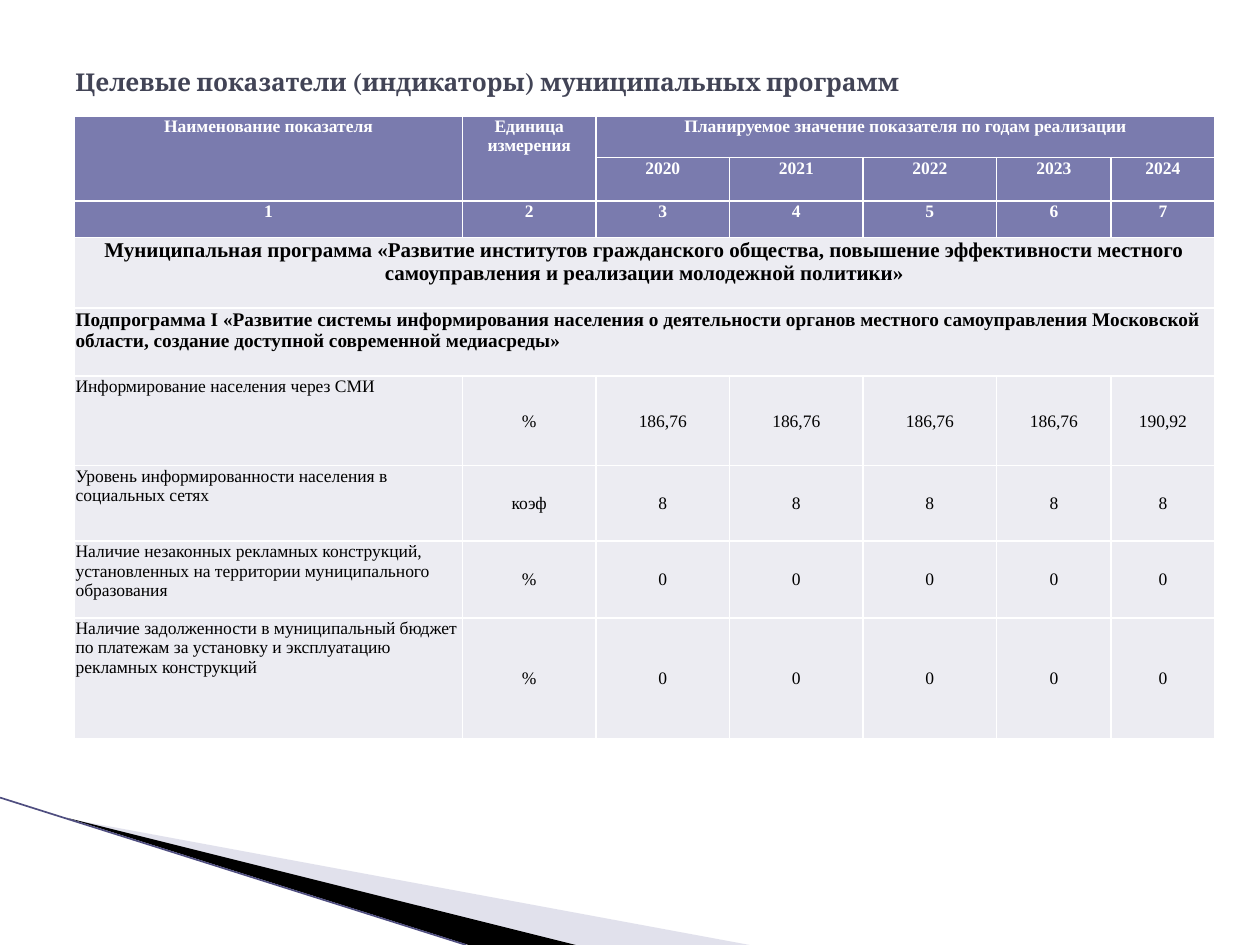
"""Build the slide with target indicators of municipal programmes."""
from lxml import etree
from pptx import Presentation
from pptx import util as u
from pptx.dml.color import RGBColor
from pptx.enum import shapes, text
from pptx.oxml.ns import qn

TITLE = "Целевые показатели (индикаторы) муниципальных программ"
YEARS = ["2020", "2021", "2022", "2023", "2024"]
HEADER = ["Наименование показателя", "Единица измерения",
          "Планируемое значение показателя по годам реализации"]
PROGRAMME = ("Муниципальная программа «Развитие институтов гражданского общества, "
             "повышение эффективности местного самоуправления и реализации молодежной политики»")
SUBPROGRAMME = ("Подпрограмма I «Развитие системы информирования населения о деятельности органов "
                "местного самоуправления Московской области, создание доступной современной медиасреды»")
INDICATORS = [
    ("Информирование населения через СМИ", "%", ["186,76"] * 4 + ["190,92"]),
    ("Уровень информированности населения в социальных сетях", "коэф", ["8"] * 5),
    ("Наличие незаконных рекламных конструкций, установленных на территории "
     "муниципального образования", "%", ["0"] * 5),
    ("Наличие задолженности в муниципальный бюджет по платежам за установку и "
     "эксплуатацию рекламных конструкций", "%", ["0"] * 5),
]
COLUMNS = [3.08, 1.06, 1.06, 1.06, 1.06, 0.91, 0.82]
ROWS = [0.33, 0.32, 0.29, 0.56, 0.54, 0.71, 0.6, 0.61, 0.96]
MERGES = [((0, 0), (1, 0)), ((0, 1), (1, 1)), ((0, 2), (0, 6)),
          ((3, 0), (3, 6)), ((4, 0), (4, 6))]
HEADER_ROWS = 3
WEDGES = [
    ("B6B6D1", 40, [(0.55, 6.5), (5.95, 7.5), (4.56, 7.5)]),
    ("000000", 100, [(0.53, 6.49), (4.57, 7.5), (3.72, 7.5)]),
]
EDGE = [(0, 6.33), (3.7, 7.5)]
CENTER, LEFT = text.PP_ALIGN.CENTER, text.PP_ALIGN.LEFT
TOP, MIDDLE = text.MSO_ANCHOR.TOP, text.MSO_ANCHOR.MIDDLE


def color(value):
    return RGBColor.from_string(value)


def apply(target, values):
    for name, value in values.items():
        setattr(target, name, value)


def write(para, wording, size, face, ink, bold):
    span = para.add_run()
    span.text = wording
    apply(span.font, {"size": u.Pt(size), "name": face, "bold": bold})
    span.font.color.rgb = color(ink)


def add_wedge(page, fill, opacity, points):
    start, *rest = [(u.Inches(x), u.Inches(y)) for x, y in points]
    builder = page.shapes.build_freeform(*start)
    builder.add_line_segments(rest, close=True)
    wedge = builder.convert_to_shape()
    wedge.shadow.inherit = False
    wedge.fill.solid()
    wedge.fill.fore_color.rgb = color(fill)
    wedge.line.fill.background()
    if opacity < 100:
        tint = wedge.fill._xPr.find(".//" + qn("a:srgbClr"))
        etree.SubElement(tint, qn("a:alpha"), val=str(opacity * 1000))


def add_edge(page):
    ends = [u.Inches(value) for point in EDGE for value in point]
    edge = page.shapes.add_connector(shapes.MSO_CONNECTOR.STRAIGHT, *ends)
    edge.line.color.rgb = color("4F4E80")
    edge.line.width = u.Pt(0.95)
    etree.SubElement(edge._element.spPr, qn("a:effectLst"))


def add_title(page):
    box = page.shapes.add_textbox(*map(u.Inches, (0.5, 0.3, 9, 0.69)))
    apply(box.text_frame, {"word_wrap": True, "vertical_anchor": MIDDLE})
    write(box.text_frame.paragraphs[0], TITLE, 14, "Cambria", "424456", True)


def border(cell):
    props = cell._tc.get_or_add_tcPr()
    for index, side in enumerate(("lnL", "lnR", "lnT", "lnB")):
        line = etree.Element(qn("a:" + side), w=str(u.Pt(1)))
        fill = etree.SubElement(line, qn("a:solidFill"))
        etree.SubElement(fill, qn("a:srgbClr"), val="FFFFFF")
        props.insert(index, line)


def style_of(row, column):
    """Return size, ink, bold, alignment and anchor for a cell."""
    if row < HEADER_ROWS:
        return 10, "FFFFFF", True, CENTER, TOP
    if row == HEADER_ROWS:
        return 12, "000000", True, CENTER, TOP
    if row == HEADER_ROWS + 1:
        return 11, "000000", True, LEFT, TOP
    return 10, "000000", False, CENTER if column else LEFT, MIDDLE if column else TOP


def add_indicators(page):
    numbers = [str(number + 1) for number in range(len(COLUMNS))]
    content = [HEADER, ["", ""] + YEARS, numbers, [PROGRAMME], [SUBPROGRAMME]]
    content += [[name, unit] + values for name, unit, values in INDICATORS]
    frame = page.shapes.add_table(len(ROWS), len(COLUMNS),
                                  *map(u.Inches, (0.59, 0.92, sum(COLUMNS), sum(ROWS))))
    table = frame.table
    for column, width in zip(table.columns, COLUMNS):
        column.width = u.Inches(width)
    for row, height in zip(table.rows, ROWS):
        row.height = u.Inches(height)
    for first, last in MERGES:
        table.cell(*first).merge(table.cell(*last))
    inset = u.Inches(0.01)
    for r in range(len(ROWS)):
        for c in range(len(COLUMNS)):
            cell = table.cell(r, c)
            size, ink, bold, align, anchor = style_of(r, c)
            cell.fill.solid()
            cell.fill.fore_color.rgb = color("7A7BAE" if r < HEADER_ROWS else "ECECF2")
            border(cell)
            apply(cell, {"margin_left": inset, "margin_right": inset, "margin_top": inset,
                         "margin_bottom": 0, "vertical_anchor": anchor})
            para = cell.text_frame.paragraphs[0]
            apply(para, {"alignment": align})
            para.font.size = u.Pt(size)
            if c < len(content[r]) and content[r][c]:
                write(para, content[r][c], size, "Times New Roman", ink, bold)


def main():
    deck = Presentation()
    apply(deck, {"slide_width": u.Inches(10), "slide_height": u.Inches(7.5)})
    page = deck.slides.add_slide(deck.slide_layouts[6])
    for wedge in WEDGES:
        add_wedge(page, *wedge)
    add_edge(page)
    add_title(page)
    add_indicators(page)
    deck.save("out.pptx")


if __name__ == "__main__":
    main()
